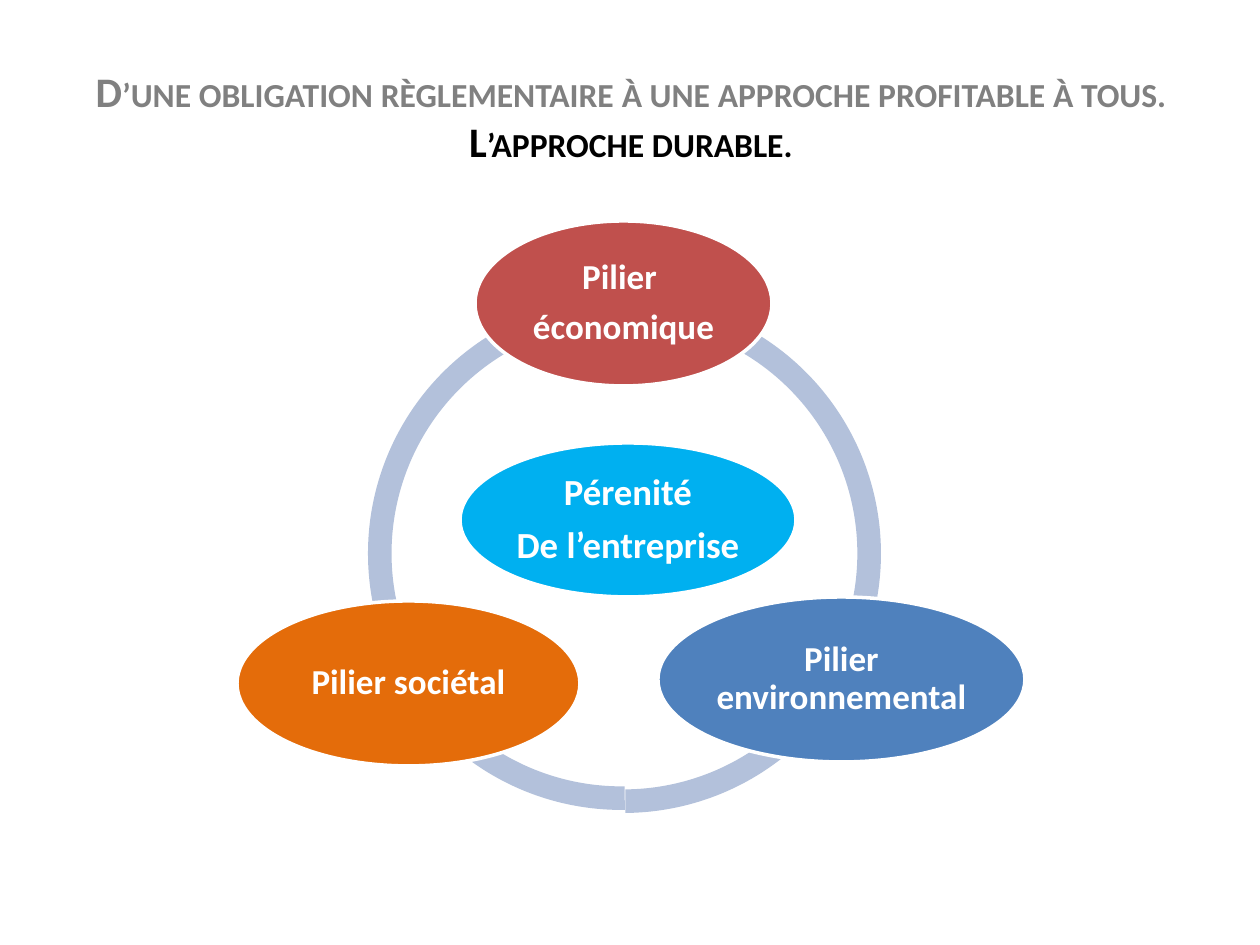
from copy import deepcopy
from dataclasses import dataclass

from pptx import Presentation
from pptx.dml.color import RGBColor
from pptx.enum.shapes import MSO_SHAPE
from pptx.enum.text import MSO_ANCHOR, PP_ALIGN
from pptx.util import Emu, Pt


def px(size):
    return Emu(round(size * 914400 / 126))


@dataclass(frozen=True)
class Theme:
    font: str = "Calibri"
    gray: str = "808080"
    black: str = "000000"
    white: str = "FFFFFF"
    ring: str = "B3C1DB"
    cyan: str = "00B0F0"
    red: str = "C0504D"
    blue: str = "4F81BD"
    orange: str = "E46C0A"
    head: int = 24
    core: int = 21
    node: int = 20


def add_text(para, text, *, font, size, color, caps=False):
    run = para.add_run()
    run.text = text
    run.font.name = font
    run.font.size = Pt(size)
    run.font.bold = True
    run.font.color.rgb = RGBColor.from_string(color)
    if caps:
        run.font._element.set("cap", "small")
    return run


class Deck:
    def __init__(self, theme):
        self.theme = theme
        self.file = Presentation()
        self.file.slide_width = px(1260)
        self.file.slide_height = px(945)
        self.slide = self.file.slides.add_slide(self.file.slide_layouts[5])

    def title(self, box, lines):
        shape = self.slide.shapes.title
        shape.left, shape.top, shape.width, shape.height = map(px, box)
        frame = shape.text_frame
        frame.word_wrap = True
        frame.vertical_anchor = MSO_ANCHOR.MIDDLE
        para = frame.paragraphs[0]
        para.alignment = PP_ALIGN.CENTER
        for row, (text, color) in enumerate(lines):
            if row:
                para.add_line_break()
                para._p[-1].append(deepcopy(run.font._element))
            run = add_text(para, text, font=self.theme.font,
                           size=self.theme.head, color=color, caps=True)

    def shape(self, kind, box, fill):
        shape = self.slide.shapes.add_shape(kind, *map(px, box))
        shape.shadow.inherit = False
        shape.fill.solid()
        shape.fill.fore_color.rgb = RGBColor.from_string(fill)
        return shape

    def arc(self, left, top, start, end):
        shape = self.shape(MSO_SHAPE.BLOCK_ARC, (left, top, 513, 513),
                           self.theme.ring)
        shape.line.fill.background()
        for spot, value in enumerate((start * 0.6, end * 0.6, 0.046)):
            shape.adjustments[spot] = value

    def oval(self, box, fill, lines, size):
        shape = self.shape(MSO_SHAPE.OVAL, box, fill)
        shape.line.color.rgb = RGBColor.from_string(self.theme.white)
        shape.line.width = Pt(2)
        frame = shape.text_frame
        frame.word_wrap = True
        frame.vertical_anchor = MSO_ANCHOR.MIDDLE
        frame.margin_left = frame.margin_right = px(4)
        frame.margin_top = frame.margin_bottom = px(4)
        for row, text in enumerate(lines):
            para = frame.add_paragraph() if row else frame.paragraphs[0]
            para.alignment = PP_ALIGN.CENTER
            para.line_spacing = 0.9
            para.space_after = Pt(size * 0.35)
            add_text(para, text, font=self.theme.font, size=size,
                     color=self.theme.white)


def main():
    theme = Theme()
    deck = Deck(theme)
    deck.title((64, 37, 1134, 157), [
        ("D’une obligation règlementaire à une approche profitable à tous.",
         theme.gray),
        ("L’approche durable.", theme.black),
    ])
    for arc in ((365, 297, 89.24, 162.31),
                (367, 300, 17.7, 89.55),
                (368, 297, 162, 18)):
        deck.arc(*arc)
    deck.oval((460, 443, 336, 154), theme.cyan,
              ["Pérenité", "De l’entreprise"], theme.core)
    for box, fill, lines in (
        ((475, 221, 297, 165), theme.red, ["Pilier ", "économique"]),
        ((658, 597, 367, 165), theme.blue, ["Pilier environnemental"]),
        ((237, 601, 343, 165), theme.orange, ["Pilier sociétal"]),
    ):
        deck.oval(box, fill, lines, theme.node)
    deck.file.save("out.pptx")


if __name__ == "__main__":
    main()
